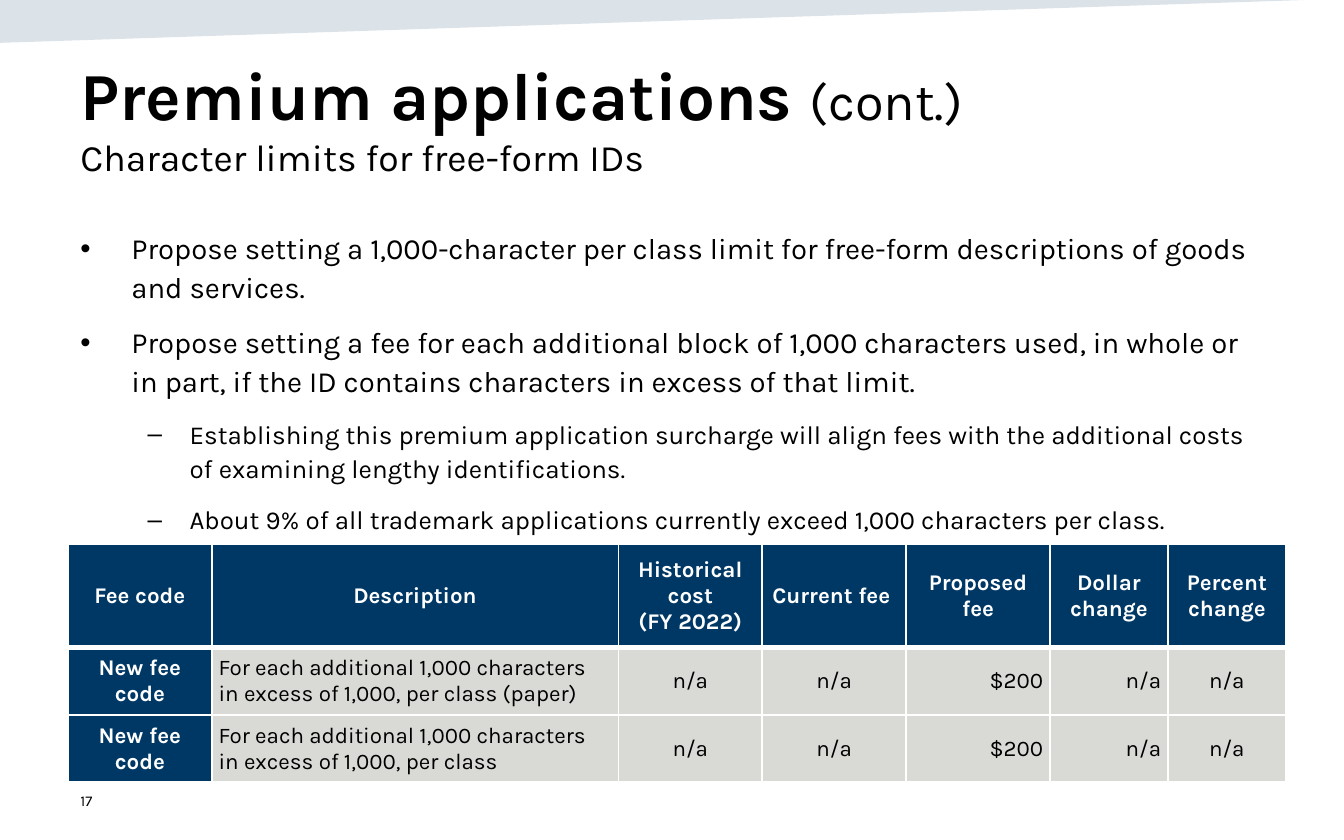
from dataclasses import dataclass

from lxml import etree
from pptx import Presentation
from pptx.dml.color import RGBColor
from pptx.enum.text import MSO_ANCHOR, PP_ALIGN
from pptx.oxml.ns import qn
from pptx.util import Pt

LEFT, CENTER, RIGHT = PP_ALIGN.LEFT, PP_ALIGN.CENTER, PP_ALIGN.RIGHT
TOP, MIDDLE, BOTTOM = MSO_ANCHOR.TOP, MSO_ANCHOR.MIDDLE, MSO_ANCHOR.BOTTOM


@dataclass(frozen=True)
class Theme:
    font: str = "Karla"
    black: str = "000000"
    white: str = "FFFFFF"
    navy: str = "003865"
    gray: str = "D9D9D6"
    band: str = "164469"
    title: float = 36
    title_note: float = 28
    subtitle: float = 20
    bullet: float = 15.7
    dash: float = 13.9
    table: float = 12
    number: float = 8


@dataclass(frozen=True)
class Level:
    mark: str
    size: float
    margin: float
    hanging: float


@dataclass(frozen=True)
class Column:
    width: float
    heading: str
    align: PP_ALIGN


T = Theme()
BULLET = Level("•", T.bullet, 27.36, 27.36)
DASH = Level("–", T.dash, 58.5, 22.5)
POINTS = [
    (BULLET, "Propose setting a 1,000-character per class limit for free-form "
             "descriptions of goods and services."),
    (BULLET, "Propose setting a fee for each additional block of 1,000 characters used, "
             "in whole or in part, if the ID contains characters in excess of that limit."),
    (DASH, "Establishing this premium application surcharge will align fees with the "
           "additional costs of examining lengthy identifications."),
    (DASH, "About 9% of all trademark applications currently exceed 1,000 characters "
           "per class."),
]
COLUMNS = [
    Column(77.1, "Fee code", CENTER),
    Column(217.8, "Description", LEFT),
    Column(77.1, "Historical cost\n(FY 2022)", CENTER),
    Column(77.1, "Current fee\u00a0", CENTER),
    Column(77.1, "Proposed fee", RIGHT),
    Column(63.2, "Dollar change", RIGHT),
    Column(63.2, "Percent change", CENTER),
]
FEE = "For each additional 1,000 characters in excess of 1,000, per class"
FEES = [
    ["New fee code", description, "n/a", "n/a", "$200", "n/a", "n/a"]
    for description in (f"{FEE} (paper)", FEE)
]


def set_all(target, formats: dict) -> None:
    for name, value in formats.items():
        setattr(target, name, value)


def add_run(p, text: str, size: float, color: str = T.black, bold: bool = False) -> None:
    r = p.add_run()
    r.text = text
    set_all(r.font, {"name": T.font, "size": Pt(size), "bold": bold})
    r.font.color.rgb = RGBColor.from_string(color)


def add_text_frame(s, left: float, top: float, width: float, height: float, anchor):
    tf = s.shapes.add_textbox(Pt(left), Pt(top), Pt(width), Pt(height)).text_frame
    set_all(tf, {"word_wrap": True, "vertical_anchor": anchor})
    return tf


def add_band(s) -> None:
    builder = s.shapes.build_freeform(Pt(0), Pt(0))
    builder.add_line_segments([(Pt(0), Pt(23)), (Pt(721.4), Pt(-0.7))], close=True)
    sp = builder.convert_to_shape()
    sp.shadow.inherit = False
    sp.line.fill.background()
    sp.fill.solid()
    sp.fill.fore_color.rgb = RGBColor.from_string(T.band)
    color = next(sp._element.spPr.iter(qn("a:srgbClr")))
    etree.SubElement(color, qn("a:alpha"), val="15000")


def add_point(p, level: Level, text: str) -> None:
    set_all(p, {"line_spacing": 1.1, "space_before": Pt(9)})
    pPr = p._p.get_or_add_pPr()
    pPr.set("marL", str(Pt(level.margin)))
    pPr.set("indent", str(-Pt(level.hanging)))
    etree.SubElement(pPr, qn("a:buFont"), typeface="Arial")
    etree.SubElement(pPr, qn("a:buChar"), char=level.mark)
    add_run(p, text, level.size)


def set_borders(cell, bottom: float) -> None:
    tcPr = cell._tc.get_or_add_tcPr()
    widths = {"a:lnL": 1, "a:lnR": 1, "a:lnT": 1, "a:lnB": bottom}
    for i, (tag, width) in enumerate(widths.items()):
        ln = etree.Element(qn(tag), w=str(Pt(width)))
        fill = etree.SubElement(ln, qn("a:solidFill"))
        etree.SubElement(fill, qn("a:srgbClr"), val=T.white)
        tcPr.insert(i, ln)


def fill_cell(cell, text: str, align, header: bool, strong: bool) -> None:
    side, edge, gap = (5.04, 0, 0) if header else (3.6, 3.6, 6)
    set_all(cell, {"vertical_anchor": MIDDLE,
                   "margin_left": Pt(side), "margin_right": Pt(side),
                   "margin_top": Pt(edge), "margin_bottom": Pt(edge)})
    cell.fill.solid()
    cell.fill.fore_color.rgb = RGBColor.from_string(T.navy if strong else T.gray)
    tf = cell.text_frame
    for i, line in enumerate(text.split("\n")):
        p = tf.add_paragraph() if i else tf.paragraphs[0]
        set_all(p, {"alignment": align, "space_before": Pt(gap), "space_after": Pt(gap)})
        add_run(p, line, T.table, T.white if strong else T.black, strong)
    set_borders(cell, 3 if header else 1)


def add_fee_table(s) -> None:
    heights = [55.2, 35, 35]
    width = sum(column.width for column in COLUMNS)
    table = s.shapes.add_table(len(heights), len(COLUMNS), Pt(36.4), Pt(291.8),
                               Pt(width), Pt(sum(heights))).table
    for row, height in zip(table.rows, heights):
        row.height = Pt(height)
    for c, column in enumerate(COLUMNS):
        table.columns[c].width = Pt(column.width)
        fill_cell(table.cell(0, c), column.heading, CENTER, True, True)
        for r, fee in enumerate(FEES, start=1):
            fill_cell(table.cell(r, c), fee[c], column.align, False, c == 0)


def main() -> None:
    prs = Presentation()
    prs.slide_width, prs.slide_height = Pt(720), Pt(450)
    s = prs.slides.add_slide(prs.slide_layouts[6])

    add_band(s)

    # Slide number
    p = add_text_frame(s, 36, 417, 162, 23.8, MIDDLE).paragraphs[0]
    add_run(p, "17", T.number)

    # Title and subtitle
    p = add_text_frame(s, 36, 24.5, 648, 75, BOTTOM).paragraphs[0]
    add_run(p, "Premium applications ", T.title, bold=True)
    add_run(p, "(cont.)", T.title_note)
    p.add_line_break()
    add_run(p, "Character limits for free-form IDs", T.subtitle)

    # Bullet points
    tf = add_text_frame(s, 36, 118, 648, 173.5, TOP)
    for i, (level, text) in enumerate(POINTS):
        add_point(tf.add_paragraph() if i else tf.paragraphs[0], level, text)

    add_fee_table(s)
    prs.save("out.pptx")


if __name__ == "__main__":
    main()
